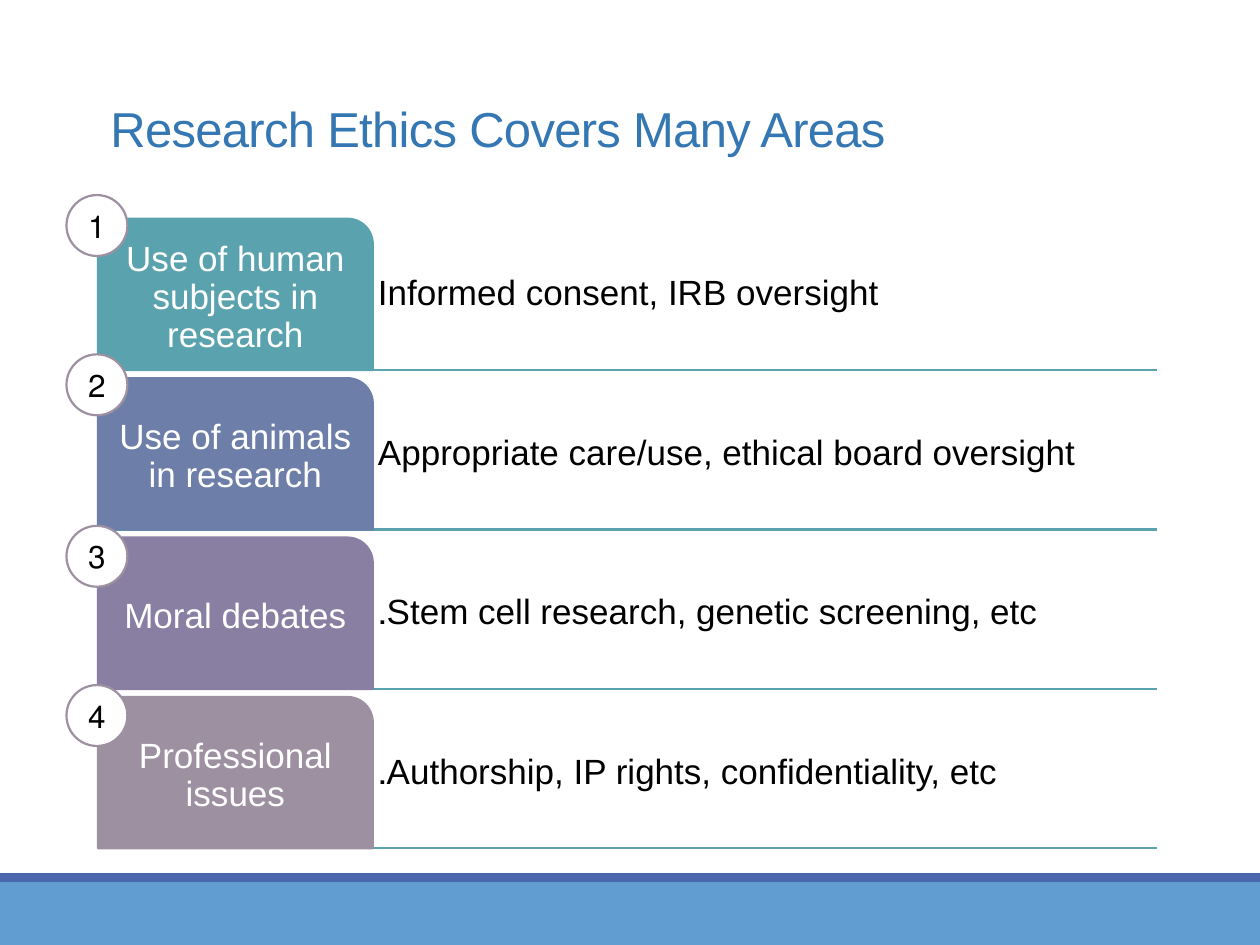
from pptx import Presentation
from pptx.dml.color import RGBColor
from pptx.enum.shapes import MSO_CONNECTOR as CONN, MSO_SHAPE as SHAPE
from pptx.enum.text import MSO_ANCHOR as ANCHOR, PP_ALIGN as ALIGN
from pptx.oxml.ns import qn
from pptx.util import Pt
from lxml import etree

WHITE = RGBColor(0xFF, 0xFF, 0xFF)
BLACK = RGBColor(0, 0, 0)
TITLE_BLUE = RGBColor(0x34, 0x77, 0xB2)
BAR_BLUE = RGBColor(0x62, 0x9D, 0xD1)
STRIPE_BLUE = RGBColor(0x4A, 0x66, 0xAC)
TEAL = RGBColor(0x5A, 0xA2, 0xAE)
INDIGO = RGBColor(0x6D, 0x7F, 0xA8)
PURPLE = RGBColor(0x88, 0x7F, 0xA3)
MAUVE = RGBColor(0x9D, 0x90, 0xA0)

# Area, examples, tab colour, top of the number badge
AREAS = [
    ("Use of human subjects in research",
     "Informed consent, IRB oversight", TEAL, 111.5),
    ("Use of animals in research",
     "Appropriate care/use, ethical board oversight", INDIGO, 202.5),
    ("Moral debates",
     "Stem cell research, genetic screening, etc.", PURPLE, 300.5),
    ("Professional issues",
     "Authorship, IP rights, confidentiality, etc.", MAUVE, 391.5),
]
LEFT, TOP, RIGHT = 56, 125, 661
TAB_W, ROW_H, PITCH = 157, 86.5, 91.1
BADGE_LEFT, BADGE_SIZE = 38, 34.8


def set_text(s, text, size=20, color=BLACK, align=ALIGN.LEFT,
             inset=3, spacing=0.9, rtl=True, tracking=None):
    tf = s.text_frame
    tf.word_wrap = True
    tf.vertical_anchor = ANCHOR.MIDDLE
    tf.margin_left = tf.margin_right = Pt(inset)
    tf.margin_top = tf.margin_bottom = Pt(inset)
    p = tf.paragraphs[0]
    p.alignment = align
    p.line_spacing = spacing
    if rtl:
        p._p.get_or_add_pPr().set("rtl", "1")
    r = p.add_run()
    r.text = text
    r.font.name = "Arial"
    r.font.size = Pt(size)
    r.font.color.rgb = color
    if tracking:
        r._r.get_or_add_rPr().set("spc", str(tracking))


def add_text(slide, x, y, w, h, text, **fmt):
    s = slide.shapes.add_textbox(Pt(x), Pt(y), Pt(w), Pt(h))
    set_text(s, text, **fmt)


def add_box(slide, kind, x, y, w, h, fill, line=None):
    s = slide.shapes.add_shape(kind, Pt(x), Pt(y), Pt(w), Pt(h))
    s.shadow.inherit = False
    s.fill.solid()
    s.fill.fore_color.rgb = fill
    if line is None:
        s.line.fill.background()
    else:
        s.line.color.rgb = line
        s.line.width = Pt(1.25)
    return s


def add_rule(slide, y):
    s = slide.shapes.add_connector(CONN.STRAIGHT, Pt(LEFT), Pt(y),
                                   Pt(RIGHT), Pt(y))
    s.line.color.rgb = TEAL
    s.line.width = Pt(1.25)
    etree.SubElement(s._element.spPr, qn("a:effectLst"))


def add_area(slide, y, area, examples, color):
    add_rule(slide, y + ROW_H)
    add_text(slide, LEFT + TAB_W, y, RIGHT - LEFT - TAB_W, ROW_H, examples)
    tab = add_box(slide, SHAPE.ROUND_2_SAME_RECTANGLE, LEFT, y, TAB_W, ROW_H,
                  color, color)
    tab.adjustments[0] = 0.167
    add_text(slide, LEFT + 4, y + 4, TAB_W - 8, ROW_H - 4, area,
             color=WHITE, align=ALIGN.CENTER)


def add_badge(slide, y, number):
    s = add_box(slide, SHAPE.OVAL, BADGE_LEFT, y, BADGE_SIZE, BADGE_SIZE,
                WHITE, MAUVE)
    set_text(s, str(number), size=18, align=ALIGN.CENTER, inset=0, spacing=1.0)


def main():
    prs = Presentation()
    prs.slide_width, prs.slide_height = Pt(720), Pt(540)
    slide = prs.slides.add_slide(prs.slide_layouts[6])

    # Footer bars
    add_box(slide, SHAPE.RECTANGLE, 0, 504, 720, 36, BAR_BLUE)
    add_box(slide, SHAPE.RECTANGLE, 0, 499, 720, 5, STRIPE_BLUE)

    # Title
    add_text(slide, LEFT, 30, RIGHT - LEFT, 91,
             "Research Ethics Covers Many Areas", size=28, color=TITLE_BLUE,
             inset=7.2, spacing=0.85, rtl=False, tracking=-40)

    # Rows, then the badges that overlap them
    for i, (area, examples, color, _) in enumerate(AREAS):
        add_area(slide, TOP + i * PITCH, area, examples, color)
    for number, (*_, badge_top) in enumerate(AREAS, 1):
        add_badge(slide, badge_top, number)

    prs.save("out.pptx")


if __name__ == "__main__":
    main()
